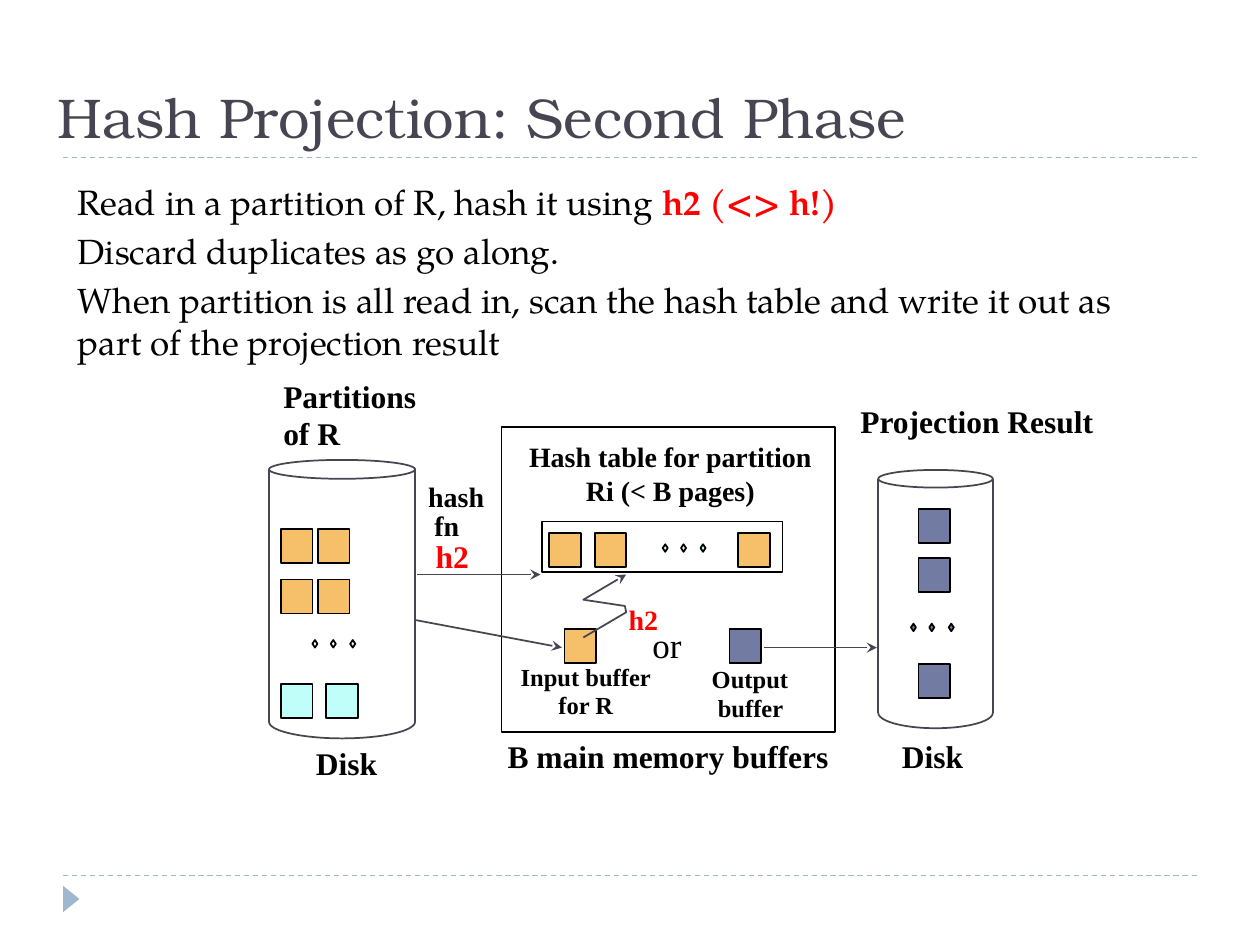
from typing import NamedTuple

from lxml import etree
from pptx import Presentation
from pptx.dml.color import RGBColor
from pptx.enum.dml import MSO_LINE
from pptx.enum.shapes import MSO_CONNECTOR, MSO_SHAPE
from pptx.enum.text import MSO_ANCHOR, MSO_AUTO_SIZE, PP_ALIGN
from pptx.oxml.ns import qn
from pptx.util import Inches, Pt

RECTANGLE, DIAMOND, OVAL = MSO_SHAPE.RECTANGLE, MSO_SHAPE.DIAMOND, MSO_SHAPE.OVAL
ARC, TRIANGLE = MSO_SHAPE.ARC, MSO_SHAPE.ISOSCELES_TRIANGLE
LEFT, CENTER = PP_ALIGN.LEFT, PP_ALIGN.CENTER

SERIF, BODY_FONT, TITLE_FONT = "Times New Roman", "TeX Gyre Pagella", "TeX Gyre Bonum"
BLACK, RED, INK, RULE = "000000", "FF0000", "464653", "9FB8CD"
ORANGE, CYAN, BLUE = "F6BF69", "C0FEF9", "727CA3"

# The slide is a grid of 100 columns by 75 rows of square cells
CELL = Inches(0.1)
COLUMNS, ROWS = 100, 75
PAGE_W, PAGE_H = 2.5, 2.7      # one memory or disk page
DOT_W, DOT_H = 0.4, 0.6        # one ellipsis dot
DOT_OFFSETS = (0, 1.45, 3)
HALF_TURN = 108                # 180 degrees in adjustment units


class Label(NamedTuple):
    column: float
    row: float
    width: float
    height: float
    lines: tuple[str, ...]
    size: int = 18
    color: str = BLACK
    align: PP_ALIGN = LEFT
    bold: bool = True
    first_spacing: float = 1


class Page(NamedTuple):
    column: float
    row: float
    color: str


class Dots(NamedTuple):
    column: float
    row: float
    color: str | None


class Disk(NamedTuple):
    column: float
    row: float
    width: float
    height: float
    rim: float


class Line(NamedTuple):
    start: tuple[float, float]
    end: tuple[float, float]


LABELS = (
    Label(21.5, 29.4, 12.7, 7, ("Partitions", "of R")),
    Label(40.3, 53.1, 12.4, 4.5, ("Input buffer", "for R"), 14, align=CENTER, first_spacing=0.5),
    Label(40.8, 34.4, 24.8, 6.4, ("Hash table for partition", "Ri (< B pages)"), 16, align=CENTER),
    Label(39.3, 58, 27.5, 4, ("B main memory buffers",)),
    Label(24.1, 58.6, 8, 4, ("Disk",)),
    Label(55.5, 52.2, 8.5, 5.6, ("Output", " buffer"), 14),
    Label(70.6, 58, 8, 4, ("Disk",)),
    Label(67.3, 31.4, 20.7, 4, ("Projection Result",)),
    Label(33, 37.6, 6.8, 3.6, ("hash",), 16),
    Label(33.5, 39.9, 4.4, 3.6, ("fn",), 16),
    Label(33.6, 42.1, 5, 4, ("h2",), 18, RED),
    Label(48.9, 47.3, 4.8, 3.7, ("h2",), 16, RED),
    Label(50.8, 49, 10, 4.4, ("or",), 20, bold=False),
)
PAGES = (
    *(Page(column, row, ORANGE) for row in (42, 46) for column in (22.3, 25.25)),
    *(Page(column, 54.3, CYAN) for column in (22.3, 25.9)),
    *(Page(column, 42.3, ORANGE) for column in (43.6, 47.2, 58.6)),
    Page(44.8, 49.9, ORANGE),
    Page(57.9, 49.9, BLUE),
    *(Page(72.9, row, BLUE) for row in (40.4, 44.3, 52.7)),
)
DOTS = (Dots(24.8, 50.8, None), Dots(52.6, 43.2, CYAN), Dots(72.3, 49.5, BLUE))
DISKS = (Disk(21.35, 36.5, 11.6, 22.1, 1.5), Disk(69.7, 37.3, 9.1, 20.5, 1.4))
ARROWS = (
    Line((33.1, 45.6), (42.9, 45.6)),
    Line((32.9, 49.2), (44.6, 51.4)),
    Line((60.6, 51.4), (69.6, 51.4)),
)
ZIGZAG = ((46.3, 50.6), (49.7, 48.6), (49.6, 48.1), (46.3, 47.6), (49.7, 45.6))
BODY = (
    (("Read in a partition of R, hash it using ", BLACK), ("h2 (<> h!)", RED)),
    (("Discard duplicates as go along.", BLACK),),
    (("When partition is all read in, scan the hash table and write it out as "
      "part of the projection result", BLACK),),
)


def rgb(color: str) -> RGBColor:
    return RGBColor.from_string(color)


def cells(*counts: float) -> list[int]:
    return [round(count * CELL) for count in counts]


def style_font(font, name: str, size: int, color: str, bold: bool) -> None:
    font.name, font.size, font.bold = name, Pt(size), bold
    font.color.rgb = rgb(color)


def style_line(shape, color: str, width: float = 1) -> None:
    shape.line.color.rgb = rgb(color)
    shape.line.width = Pt(width)


def add_arrowhead(shape) -> None:
    outline = shape._element.spPr.find(qn("a:ln"))
    etree.SubElement(outline, qn("a:tailEnd"), type="stealth")


def draw_shape(slide, kind, box: tuple, fill: str | None = None, line: str | None = BLACK):
    shape = slide.shapes.add_shape(kind, *cells(*box))
    shape.shadow.inherit = False
    if fill:
        shape.fill.solid()
        shape.fill.fore_color.rgb = rgb(fill)
    else:
        shape.fill.background()
    if line:
        style_line(shape, line)
    else:
        shape.line.fill.background()
    return shape


def draw_line(slide, line: Line, color: str = INK, width: float = 1):
    connector = slide.shapes.add_connector(MSO_CONNECTOR.STRAIGHT, *cells(*line.start, *line.end))
    style_line(connector, color, width)
    etree.SubElement(connector._element.spPr, qn("a:effectLst"))
    return connector


def draw_zigzag(slide, points: tuple) -> None:
    start, *rest = (cells(*point) for point in points)
    builder = slide.shapes.build_freeform(*start)
    builder.add_line_segments(rest, close=False)
    zigzag = builder.convert_to_shape()
    zigzag.shadow.inherit = False
    zigzag.fill.background()
    style_line(zigzag, INK)
    add_arrowhead(zigzag)


def draw_disk(slide, disk: Disk) -> None:
    column, row, width, height, rim = disk
    draw_shape(slide, OVAL, (column, row, width, rim), line=INK)
    base = rim * 1.75
    arc = draw_shape(slide, ARC, (column, row + height - base, width, base), line=INK)
    arc.adjustments[0], arc.adjustments[1] = 0, HALF_TURN
    for side in (column, column + width):
        draw_line(slide, Line((side, row + rim / 2), (side, row + height - base / 2)))


def draw_label(slide, label: Label) -> None:
    box = slide.shapes.add_textbox(*cells(label.column, label.row, label.width, label.height))
    frame = box.text_frame
    frame.text = "\n".join(label.lines)
    frame.word_wrap = False
    for para in frame.paragraphs:
        para.alignment = label.align
        style_font(para.runs[0].font, SERIF, label.size, label.color, label.bold)
    if label.first_spacing != 1:
        frame.paragraphs[0].line_spacing = label.first_spacing


def draw_body(slide) -> None:
    frame = slide.shapes.add_textbox(*cells(5.2, 13.85, 86.7, 17)).text_frame
    frame.word_wrap = True
    for index, spans in enumerate(BODY):
        para = frame.add_paragraph() if index else frame.paragraphs[0]
        para.space_before = Pt(4)
        for text, color in spans:
            span = para.add_run()
            span.text = text
            style_font(span.font, BODY_FONT, 20, color, color == RED)


def draw_title(slide) -> None:
    title = slide.shapes.title
    title.left, title.top, title.width, title.height = cells(3.6, 0.3, 85, 12.1)
    frame = title.text_frame
    frame.text = "Hash Projection: Second Phase"
    frame.auto_size = MSO_AUTO_SIZE.NONE
    frame.vertical_anchor = MSO_ANCHOR.BOTTOM
    frame.paragraphs[0].alignment = LEFT
    style_font(frame.paragraphs[0].runs[0].font, TITLE_FONT, 32, INK, False)


def main() -> None:
    deck = Presentation()
    deck.slide_width, deck.slide_height = cells(COLUMNS, ROWS)
    slide = deck.slides.add_slide(deck.slide_layouts[5])

    # Rules and corner marker
    for row in (69.5, 12.5):
        rule = draw_line(slide, Line((5, row), (95, row)), RULE, 0.75)
        rule.line.dash_style = MSO_LINE.DASH
    draw_shape(slide, TRIANGLE, (4.6, 70.7, 2.1, 1.3), RULE, None).rotation = 90

    draw_title(slide)
    draw_body(slide)

    # Main memory, hash table and disks
    draw_shape(slide, RECTANGLE, (39.8, 33.9, 26.5, 24.2))
    draw_shape(slide, RECTANGLE, (43, 41.4, 19.1, 4))
    for disk in DISKS:
        draw_disk(slide, disk)
    for page in PAGES:
        draw_shape(slide, RECTANGLE, (page.column, page.row, PAGE_W, PAGE_H), page.color)
    for dots in DOTS:
        for offset in DOT_OFFSETS:
            draw_shape(slide, DIAMOND, (dots.column + offset, dots.row, DOT_W, DOT_H), dots.color)

    # Data flow
    for arrow in ARROWS:
        add_arrowhead(draw_line(slide, arrow))
    draw_zigzag(slide, ZIGZAG)

    for label in LABELS:
        draw_label(slide, label)
    deck.save("out.pptx")


if __name__ == "__main__":
    main()
